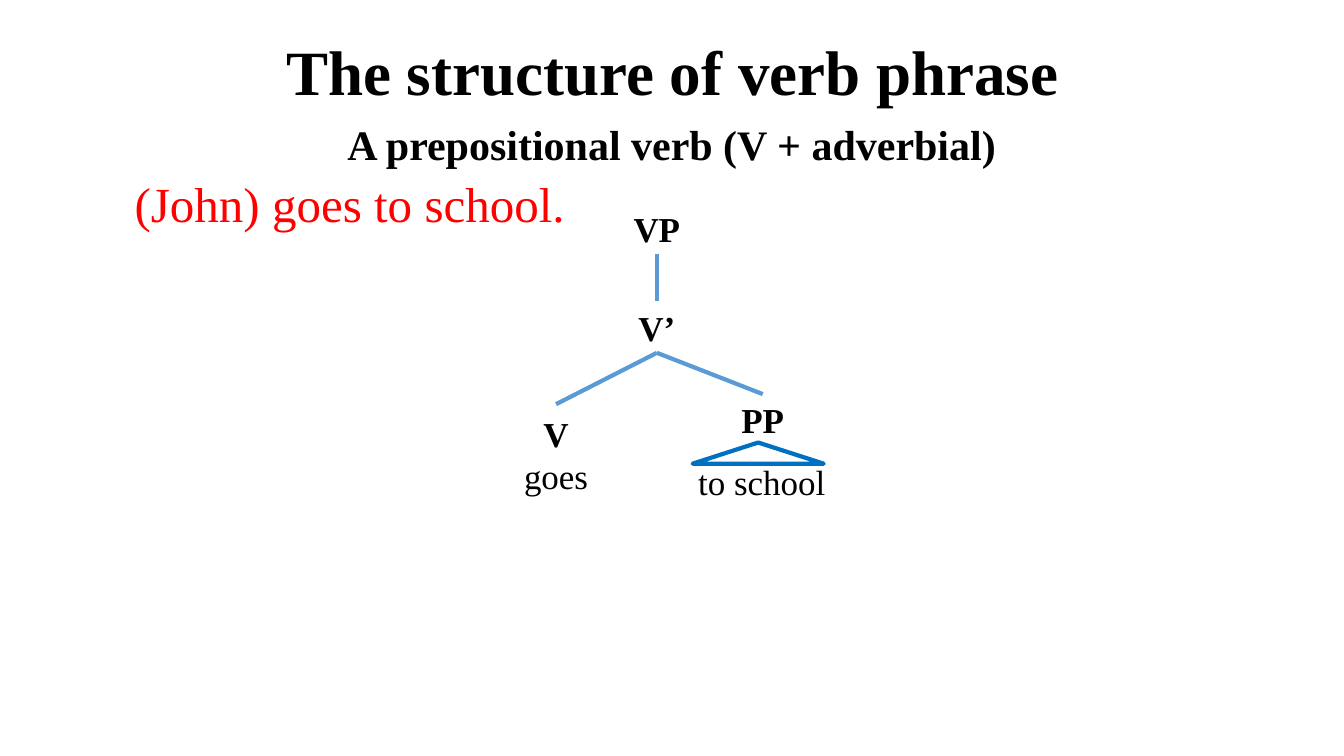
from lxml.etree import SubElement
from pptx import Presentation
from pptx.dml.color import RGBColor
from pptx.enum.shapes import MSO_CONNECTOR, MSO_SHAPE
from pptx.enum.text import MSO_ANCHOR, MSO_AUTO_SIZE, PP_ALIGN
from pptx.oxml.ns import qn
from pptx.util import Inches, Pt

FONT = "Times New Roman"
COLORS = {"ink": "000000", "red": "FF0000", "paper": "FFFFFF",
          "branch": "5B9BD5", "roof": "0070C0"}

TITLE = "The structure of verb phrase"
HEAD = "A prepositional verb (V + adverbial)"
SENTENCE = "(John) goes to school."

# Tree nodes: name -> (box, [(line, bold), ...])
NODES = {
    "VP": ((6.08, 2.01, 0.87, 0.51), [("VP", True)]),
    "V'": ((6.08, 2.99, 0.87, 0.51), [("V’", True)]),
    "V": ((4.96, 4.01, 1.11, 1), [("V", True), ("goes", False)]),
    "PP": ((7.13, 3.91, 0.87, 0.51), [("PP", True)]),
    "leaf": ((6.73, 4.51, 1.65, 0.54), [("to school", False)]),
}
BRANCHES = [("VP", "V'"), ("V'", "V"), ("V'", "PP")]
BOTTOM, TOP = 2, 0


def color(name):
    return RGBColor.from_string(COLORS[name])


def write(shape, lines, size, ink="ink", anchor=MSO_ANCHOR.MIDDLE):
    frame = shape.text_frame
    frame.word_wrap = True
    frame.auto_size = MSO_AUTO_SIZE.NONE
    frame.vertical_anchor = anchor
    frame.text = "\n".join(text for text, bold in lines)
    for para, (text, bold) in zip(frame.paragraphs, lines):
        para.alignment = PP_ALIGN.CENTER
        font = para.font
        font.name, font.size, font.bold = FONT, Pt(size), bold
        font.color.rgb = color(ink)
    return frame.paragraphs[0]


def place(shape, *box):
    shape.left, shape.top, shape.width, shape.height = map(Inches, box)


def stroke(shape, name):
    shape.line.color.rgb = color(name)
    shape.line.width = Pt(3)


deck = Presentation()
deck.slide_width, deck.slide_height = Inches(13.33), Inches(7.5)
slide = deck.slides.add_slide(deck.slide_layouts[1])
shapes = slide.shapes

# Title and heading
title, body = slide.placeholders
place(title, 0.92, 0.4, 11.5, 0.7)
write(title, [(TITLE, True)], 45).line_spacing = 0.9
place(body, 0.48, 1.18, 12.37, 5.95)
head = write(body, [(HEAD, True)], 30, anchor=MSO_ANCHOR.TOP)
head.line_spacing, head.space_before = 0.9, Pt(10)
props = head._p.get_or_add_pPr()
props.set("marL", "0")
props.set("indent", "0")
SubElement(props, qn("a:buNone"))

# Example sentence
box = map(Inches, (1.18, 1.69, 4.58, 0.65))
example = shapes.add_shape(MSO_SHAPE.RECTANGLE, *box)
example.shadow.inherit = False
example.fill.solid()
example.fill.fore_color.rgb = color("paper")
example.line.fill.background()
write(example, [(SENTENCE, False)], 35, "red")

# Triangle over the prepositional phrase
box = map(Inches, (6.87, 4.39, 1.3, 0.21))
roof = shapes.add_shape(MSO_SHAPE.ISOSCELES_TRIANGLE, *box)
roof.shadow.inherit = False
roof.fill.background()
stroke(roof, "roof")

# Tree nodes
nodes = {}
for name, (box, lines) in NODES.items():
    nodes[name] = shapes.add_textbox(*map(Inches, box))
    write(nodes[name], lines, 25)

# Branches
for start, end in BRANCHES:
    branch = shapes.add_connector(MSO_CONNECTOR.STRAIGHT, 0, 0, 0, 0)
    branch.begin_connect(nodes[start], BOTTOM)
    branch.end_connect(nodes[end], TOP)
    stroke(branch, "branch")
    SubElement(branch._element.spPr, qn("a:effectLst"))

deck.save("out.pptx")
